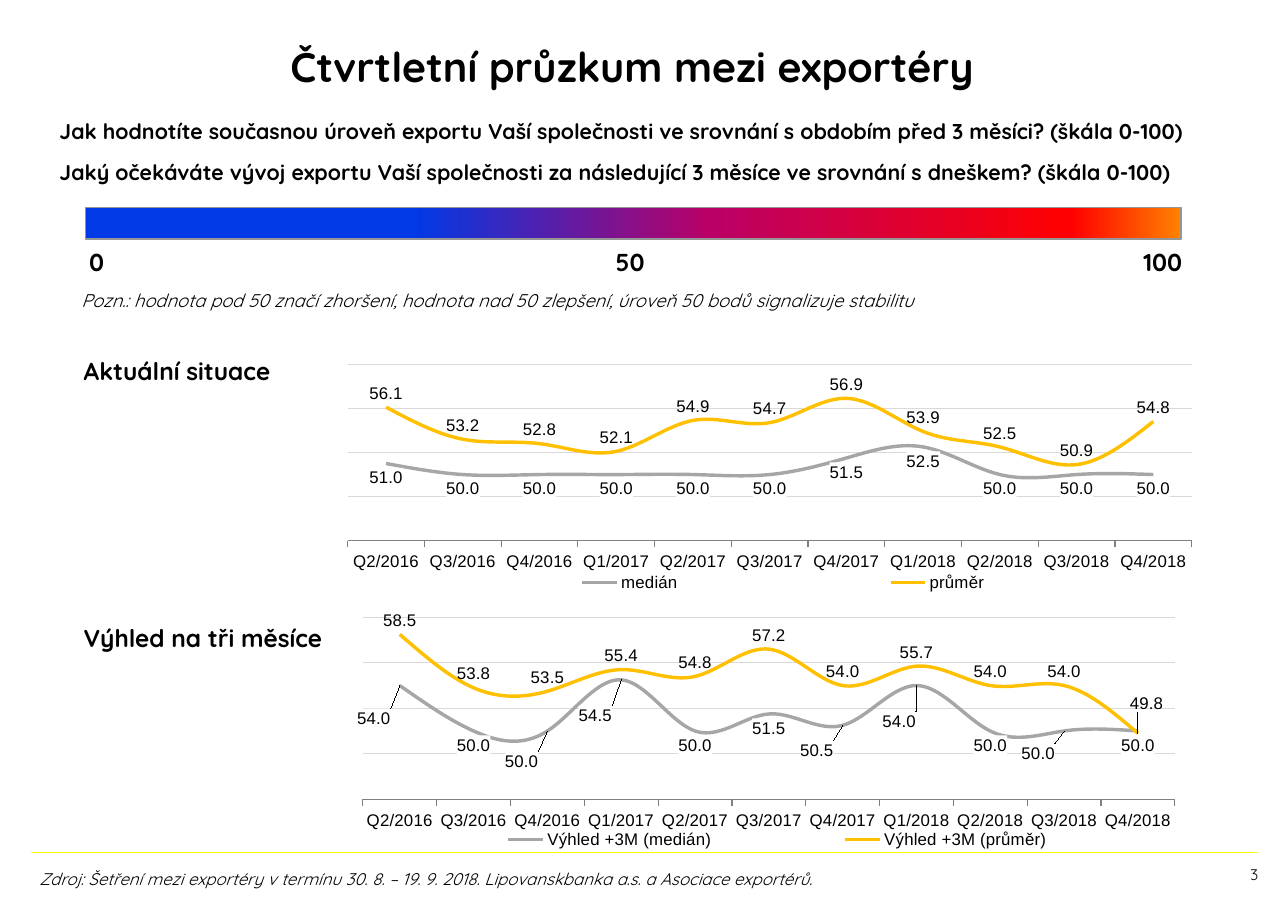
from dataclasses import dataclass, field
from typing import Any

from lxml import etree
from pptx import Presentation
from pptx import util as u
from pptx.chart.data import CategoryChartData
from pptx.dml.color import RGBColor
from pptx.enum import chart as ch
from pptx.enum import shapes, text
from pptx.oxml import parse_xml
from pptx.oxml.ns import nsdecls, qn


@dataclass(frozen=True)
class Theme:
    font: str = "Quicksand"
    chart_font: str = "Arial"
    ink: str = "000000"
    paper: str = "FFFFFF"
    rule: str = "FFFF00"
    border: str = "969696"
    grid: str = "D9D9D9"
    axis: str = "808080"
    median: str = "A6A6A6"
    mean: str = "FFC000"
    scale: tuple = ((30, "0039E5"), (57, "BA0066"), (90, "FF0000"), (100, "FF8200"))
    title: int = 27
    heading: int = 16
    question: int = 14
    note: int = 12
    source: int = 11
    number: int = 10
    chart: int = 11


@dataclass(frozen=True)
class Label:
    place: tuple
    lines: tuple
    style: dict
    insets: tuple = (0.12, 0.16, 0.12, 0)


@dataclass(frozen=True)
class Line:
    name: str
    values: tuple
    color: str
    position: Any
    number_format: str
    filled: bool = False
    moved: dict = field(default_factory=dict)


@dataclass(frozen=True)
class Panel:
    place: tuple
    plot: tuple
    legend: tuple
    lines: tuple


THEME = Theme()
BOLD = {"bold": True}
HEADING = {"size": u.Pt(THEME.heading), **BOLD}
BELOW, ABOVE = ch.XL_LABEL_POSITION.BELOW, ch.XL_LABEL_POSITION.ABOVE
QUARTERS = [f"Q{n % 4 + 1}/{2016 + n // 4}" for n in range(1, 12)]

LABELS = (
    Label((0.64, 2.58, 10.84, 0.3),
          ("Pozn.: hodnota pod 50 značí zhoršení, hodnota nad 50 zlepšení, úroveň 50 bodů signalizuje stabilitu",),
          {"size": u.Pt(THEME.note), "italic": True}, (0.1, 0.05, 0.1, 0.05)),
    Label((0.64, 3.07, 2.46, 0.5), ("Aktuální situace",), HEADING),
    Label((0.64, 5.5, 2.46, 0.5), ("Výhled na tři měsíce",), HEADING),
    Label((0.42, 0.91, 10.86, 0.95),
          ("Jak hodnotíte současnou úroveň exportu Vaší společnosti ve srovnání s obdobím před 3 měsíci? (škála 0-100)",
           "Jaký očekáváte vývoj exportu Vaší společnosti za následující 3 měsíce ve srovnání s dneškem? (škála 0-100)"),
          {"size": u.Pt(THEME.question), **BOLD}),
    Label((0.26, 7.84, 9.94, 0.29),
          ("Zdroj: Šetření mezi exportéry v termínu 30. 8. – 19. 9. 2018. Lipovanskbanka a.s. a Asociace exportérů.",),
          {"size": u.Pt(THEME.source), "italic": True}, (0.1, 0.05, 0.1, 0.05)),
)

PANELS = (
    Panel((2.83, 3.11, 8.15, 2.45), (0.04, 0.08, 0.94, 0.655), (0.07, 0.84, 0.91, 0.1), (
        Line("medián", (51, 50, 50, 50, 50, 50, 51.5, 52.5, 50, 50, 50),
             THEME.median, BELOW, "0.0", True),
        Line("průměr", (56.1, 53.2, 52.8, 52.1, 54.9, 54.7, 56.9, 53.9, 52.5, 50.9, 54.8),
             THEME.mean, ABOVE, "#,##0.0"))),
    Panel((2.98, 5.41, 7.84, 2.43), (0.04, 0.08, 0.94, 0.68), (0.06, 0.86, 0.92, 0.1), (
        Line("Výhled +3M (medián)", (54, 50, 50, 54.5, 50, 51.5, 50.5, 54, 50, 50, 50),
             THEME.median, BELOW, "0.0", True,
             {0: (-0.03, 0.07), 2: (-0.03, 0.06), 3: (-0.03, 0.08),
              6: (-0.03, 0.04), 7: (-0.02, 0.08), 9: (-0.03, 0.03)}),
        Line("Výhled +3M (průměr)", (58.5, 53.8, 53.5, 55.4, 54.8, 57.2, 54, 55.7, 54, 54, 49.8),
             THEME.mean, ABOVE, "#,##0.0", False, {10: (0.01, -0.06)}))),
)


def assign(target: Any, values: dict) -> None:
    for name, value in values.items():
        setattr(target, name, value)


def inches(place: tuple) -> list:
    return [u.Inches(value) for value in place]


def rgb(color: str) -> RGBColor:
    return RGBColor.from_string(color)


def style_font(font: Any, style: dict, name: str = THEME.font) -> None:
    assign(font, {"name": name, **style})
    font.color.rgb = rgb(THEME.ink)


def style_line(line: Any, color: str, width: float) -> None:
    line.color.rgb = rgb(color)
    line.width = u.Pt(width)


def set_insets(frame: Any, insets: tuple) -> None:
    sides = ("margin_left", "margin_top", "margin_right", "margin_bottom")
    assign(frame, dict(zip(sides, inches(insets))))


def add_label(page: Any, label: Label) -> Any:
    frame = page.shapes.add_textbox(*inches(label.place)).text_frame
    frame.word_wrap = True
    set_insets(frame, label.insets)
    for index, line in enumerate(label.lines):
        para = frame.add_paragraph() if index else frame.paragraphs[0]
        if index:
            para.space_before = u.Pt(10)
        span = para.add_run()
        span.text = line
        style_font(span.font, label.style)
    return frame


def add_title(page: Any) -> None:
    title = page.shapes.title
    assign(title, dict(zip(("left", "top", "width", "height"), inches((0.64, 0.18, 10.19, 0.83)))))
    frame = title.text_frame
    frame.text = "Čtvrtletní průzkum mezi exportéry"
    assign(frame, {"vertical_anchor": text.MSO_ANCHOR.MIDDLE, "auto_size": text.MSO_AUTO_SIZE.NONE})
    set_insets(frame, (0, 0, 0, 0))
    para = frame.paragraphs[0]
    para.alignment = text.PP_ALIGN.CENTER
    style_font(para.runs[0].font, {"size": u.Pt(THEME.title), **BOLD})


def add_scale(page: Any) -> None:
    bar = page.shapes.add_shape(shapes.MSO_SHAPE.RECTANGLE, *inches((0.78, 1.88, 9.94, 0.29)))
    bar.shadow.inherit = False
    style_line(bar.line, THEME.border, 0.75)
    bar.fill.gradient()
    bar.fill.gradient_angle = 0
    stops = bar._element.spPr.find(".//" + qn("a:gsLst"))
    for stop in list(stops):
        stops.remove(stop)
    for percent, color in THEME.scale:
        stop = etree.SubElement(stops, qn("a:gs"), pos=str(percent * 1000))
        etree.SubElement(stop, qn("a:srgbClr"), val=color)

    frame = add_label(page, Label((0.69, 2.08, 10.73, 0.5), ("0\t50\t100",), HEADING))
    tabs = etree.SubElement(frame.paragraphs[0]._p.get_or_add_pPr(), qn("a:tabLst"))
    for position, align in ((4.91, "ctr"), (9.92, "r")):
        etree.SubElement(tabs, qn("a:tab"), pos=str(u.Inches(position)), algn=align)


def add_footer(page: Any) -> None:
    rule = page.shapes.add_connector(shapes.MSO_CONNECTOR.STRAIGHT, *inches((0.28, 7.74, 11.42, 7.74)))
    style_line(rule.line, THEME.rule, 1)
    etree.SubElement(rule._element.spPr, qn("a:effectLst"))
    style = {"size": u.Pt(THEME.number)}
    frame = add_label(page, Label((6.76, 7.85, 4.66, 0.42), ("3",), style, (0, 0, 0, 0)))
    frame.paragraphs[0].alignment = text.PP_ALIGN.RIGHT


def set_layout(parent: Any, index: int, values: dict, inner: bool = False) -> None:
    for old in parent.findall(qn("c:layout")):
        parent.remove(old)
    layout = etree.Element(qn("c:layout"))
    manual = etree.SubElement(layout, qn("c:manualLayout"))
    modes = {"layoutTarget": "inner"} if inner else {}
    if "w" in values:
        modes |= {"xMode": "edge", "yMode": "edge"}
    for name, value in (modes | values).items():
        etree.SubElement(manual, qn(f"c:{name}"), val=str(value))
    parent.insert(index, layout)


def style_labels(labels: Any, element: Any, line: Line) -> None:
    style_font(labels.font, {"size": u.Pt(THEME.chart)}, THEME.chart_font)
    labels.position = line.position
    if line.filled:
        element.find(qn("c:txPr")).addprevious(parse_xml(
            f'<c:spPr {nsdecls("c", "a")}><a:solidFill><a:srgbClr val="{THEME.paper}"/></a:solidFill></c:spPr>'))


def add_panel(page: Any, panel: Panel) -> None:
    data = CategoryChartData()
    data.categories = QUARTERS
    for line in panel.lines:
        data.add_series(line.name, line.values, line.number_format)
    chart = page.shapes.add_chart(ch.XL_CHART_TYPE.LINE, *inches(panel.place), data).chart
    style_font(chart.font, {"size": u.Pt(THEME.chart)}, THEME.chart_font)
    assign(chart, {"has_title": False, "has_legend": True})
    assign(chart.legend, {"position": ch.XL_LEGEND_POSITION.BOTTOM, "include_in_layout": False})
    set_layout(chart.legend._element, 1, dict(zip("xywh", panel.legend)))
    set_layout(chart._chartSpace.chart.plotArea, 0, dict(zip("xywh", panel.plot)), True)

    axis = chart.value_axis
    assign(axis, {"minimum_scale": 44, "maximum_scale": 60, "major_unit": 4,
                  "has_major_gridlines": True, "visible": False})
    style_line(axis.major_gridlines.format.line, THEME.grid, 0.5)
    chart.category_axis.major_tick_mark = ch.XL_TICK_MARK.OUTSIDE
    style_line(chart.category_axis.format.line, THEME.axis, 0.75)

    chart.plots[0].vary_by_categories = False
    for series, line in zip(chart.plots[0].series, panel.lines):
        series.smooth = True
        style_line(series.format.line, line.color, 2.25)
        labels = series.data_labels
        assign(labels, {"show_value": True, "number_format": line.number_format,
                        "number_format_is_linked": False})
        style_labels(labels, labels._element, line)
        for index, offset in line.moved.items():
            label = series.points[index].data_label
            label.position = line.position
            element = labels._element.findall(qn("c:dLbl"))[-1]
            style_labels(label, element, line)
            set_layout(element, 1, dict(zip("xy", offset)))


def main() -> None:
    deck = Presentation()
    assign(deck, {"slide_width": u.Inches(11.69), "slide_height": u.Inches(8.27)})
    page = deck.slides.add_slide(deck.slide_layouts.get_by_name("Title Only"))
    add_title(page)
    add_footer(page)
    add_scale(page)
    for label in LABELS:
        add_label(page, label)
    for panel in PANELS:
        add_panel(page, panel)
    deck.save("out.pptx")


if __name__ == "__main__":
    main()
